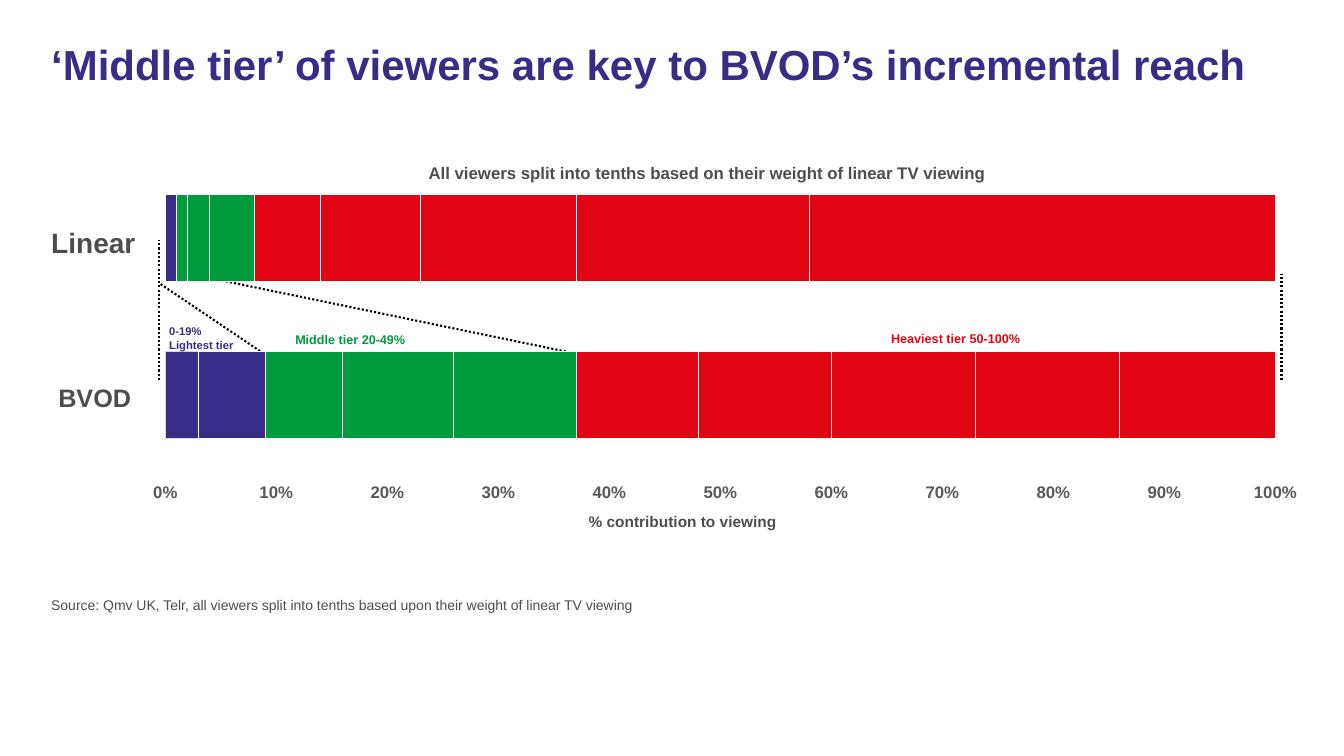
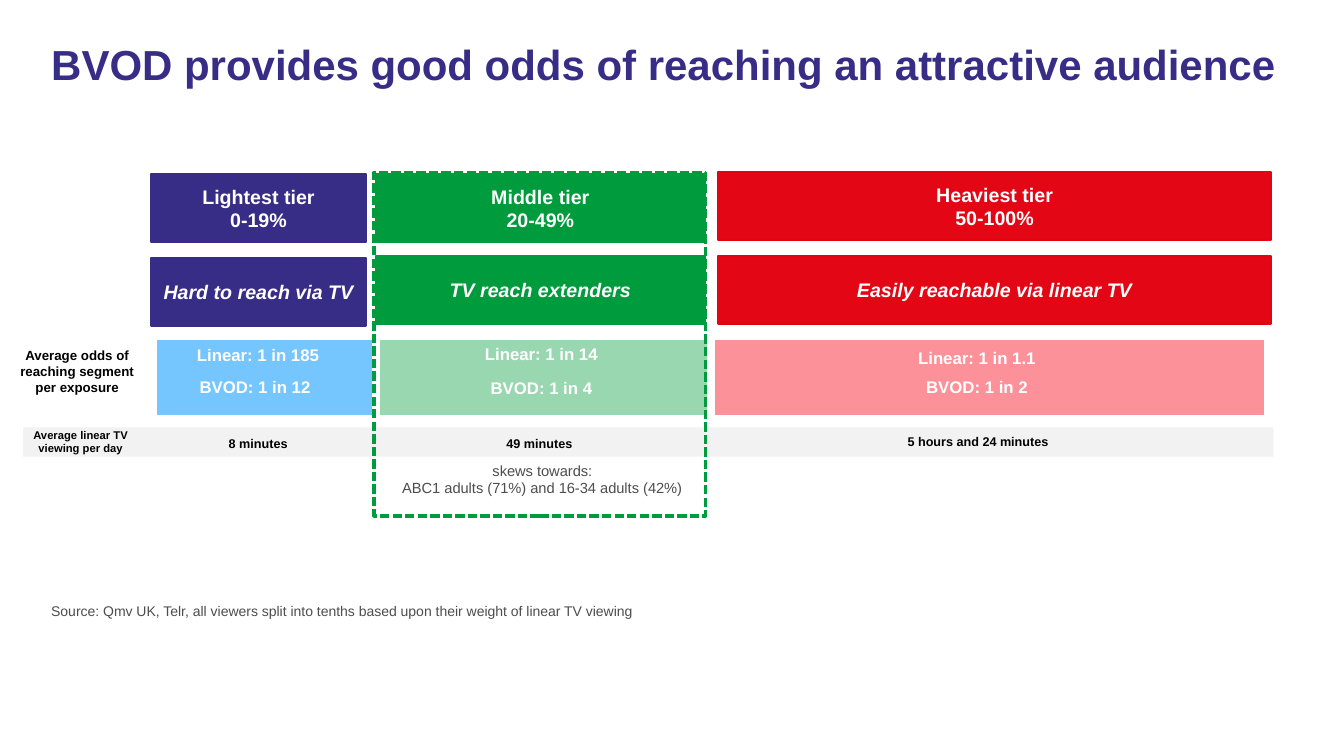
from dataclasses import dataclass

import lxml.etree
import pptx
import pptx.chart.data
import pptx.dml.color
import pptx.enum.chart
import pptx.enum.dml
import pptx.enum.shapes
import pptx.enum.text
import pptx.oxml.ns
import pptx.util

Inches, Pt = pptx.util.Inches, pptx.util.Pt
Align, Anchor = pptx.enum.text.PP_ALIGN, pptx.enum.text.MSO_ANCHOR
Dash = pptx.enum.dml.MSO_LINE
ChartType = pptx.enum.chart.XL_CHART_TYPE
qn = pptx.oxml.ns.qn


@dataclass(frozen=True)
class Theme:
    font: str = "Arial"
    indigo: str = "372D87"
    green: str = "009B3C"
    red: str = "E10514"
    red_band: str = "E30615"
    pale_blue: str = "75C5FF"
    pale_green: str = "99D7B1"
    pale_red: str = "FD9199"
    grey: str = "4D4D4D"
    axis_grey: str = "595959"
    edge_grey: str = "D9D9D9"
    strip_grey: str = "F2F2F2"
    black: str = "000000"
    white: str = "FFFFFF"
    title_size: float = 30
    row_size: float = 20
    second_row_size: float = 18
    band_size: float = 14
    lead_size: float = 12
    axis_size: float = 11
    skew_size: float = 10.5
    source_size: float = 10
    odds_label_size: float = 9.5
    label_size: float = 9
    small_size: float = 8


@dataclass(frozen=True)
class Box:
    left: float
    top: float
    width: float
    height: float

    def inner(self, dx, dy, width, height):
        """A box placed from this box's top left corner."""
        return Box(self.left + dx, self.top + dy, width, height)

    def lengths(self):
        return [Inches(v) for v in (self.left, self.top, self.width, self.height)]


THEME = Theme()
TITLE_BOX = Box(0.41, 0.39, 12.4, 1.12)
SOURCE = ("Source: Qmv UK, Telr, all viewers split into tenths based upon "
          "their weight of linear TV viewing")


def rgb(code):
    return pptx.dml.color.RGBColor.from_string(code)


def style_font(font, size, color, bold=False, italic=False):
    font.name, font.size = THEME.font, Pt(size)
    font.color.rgb = rgb(color)
    font.bold, font.italic = bold, italic


def style_line(line, color, width, dash=None):
    line.color.rgb, line.width = rgb(color), Pt(width)
    if dash:
        line.dash_style = dash


def write(frame, lines, size, color, align, bold, italic=False):
    frame.word_wrap = True
    for index, words in enumerate(lines):
        paragraph = frame.add_paragraph() if index else frame.paragraphs[0]
        paragraph.alignment = align
        run = paragraph.add_run()
        run.text = words
        style_font(run.font, size, color, bold, italic)


def add_text(slide, box, lines, size, color, align=Align.LEFT, bold=True):
    frame = slide.shapes.add_textbox(*box.lengths()).text_frame
    write(frame, lines, size, color, align, bold)
    return frame


def add_rect(slide, box, fill=None, edge=None, width=1.5, dash=None):
    rect = slide.shapes.add_shape(
        pptx.enum.shapes.MSO_SHAPE.RECTANGLE, *box.lengths())
    rect.shadow.inherit = False
    if fill:
        rect.fill.solid()
        rect.fill.fore_color.rgb = rgb(fill)
    else:
        rect.fill.background()
    if edge:
        style_line(rect.line, edge, width, dash)
    else:
        rect.line.fill.background()
    return rect


def add_band(slide, box, lines, fill, edge, italic=False):
    frame = add_rect(slide, box, fill, edge).text_frame
    frame.vertical_anchor = Anchor.MIDDLE
    write(frame, lines, THEME.band_size, THEME.white, Align.CENTER, True, italic)


def add_dotted_line(slide, box, x1, y1, x2, y2):
    ends = [Inches(v) for v in (box.left + x1, box.top + y1,
                                box.left + x2, box.top + y2)]
    line = slide.shapes.add_connector(
        pptx.enum.shapes.MSO_CONNECTOR.STRAIGHT, *ends)
    style_line(line.line, THEME.black, 1.5, Dash.ROUND_DOT)
    properties = line._element.spPr
    lxml.etree.SubElement(properties, qn("a:effectLst"))


def set_plot_area(chart, box, plot):
    """Fix the inner plot area and leave the chart background clear."""
    area = chart._chartSpace.find(qn("c:chart"))
    plot_area = area.find(qn("c:plotArea"))
    layout = plot_area.find(qn("c:layout"))
    if layout is None:
        layout = lxml.etree.Element(qn("c:layout"))
        plot_area.insert(0, layout)
    manual = lxml.etree.SubElement(layout, qn("c:manualLayout"))
    settings = [("layoutTarget", "inner"), ("xMode", "edge"), ("yMode", "edge"),
                ("x", plot.left / box.width), ("y", plot.top / box.height),
                ("w", plot.width / box.width), ("h", plot.height / box.height)]
    for tag, value in settings:
        lxml.etree.SubElement(manual, qn("c:" + tag)).set("val", str(value))
    background = lxml.etree.Element(qn("c:spPr"))
    lxml.etree.SubElement(background, qn("a:noFill"))
    edge = lxml.etree.SubElement(background, qn("a:ln"))
    lxml.etree.SubElement(edge, qn("a:noFill"))
    area.addnext(background)


def add_stacked_bars(slide, box, plot, kind, categories, series, gap):
    """Each series is (values, fill, edge colour, edge width)."""
    data = pptx.chart.data.CategoryChartData()
    data.categories = categories
    for number, (values, *_) in enumerate(series, 1):
        data.add_series(f"Series {number}", values)
    chart = slide.shapes.add_chart(kind, *box.lengths(), data).chart
    chart.has_legend = chart.has_title = False
    style_font(chart.font, THEME.source_size, THEME.black)
    bars = chart.plots[0]
    bars.gap_width, bars.overlap, bars.vary_by_categories = gap, 100, False
    for bar, (_, fill, edge, width) in zip(bars.series, series):
        bar.format.fill.solid()
        bar.format.fill.fore_color.rgb = rgb(fill)
        style_line(bar.format.line, edge, width)
    chart.category_axis.visible = False
    axis = chart.value_axis
    axis.has_major_gridlines = False
    axis.minimum_scale, axis.maximum_scale = 0, 1
    set_plot_area(chart, box, plot)
    return chart


def add_frame(slide, title, source_top):
    """The title and source line that both slides share."""
    heading = add_text(slide, TITLE_BOX, [title], THEME.title_size, THEME.indigo)
    heading.paragraphs[0].line_spacing = 0.9
    add_text(slide, Box(TITLE_BOX.left, source_top, TITLE_BOX.width, 0.33),
             [SOURCE], THEME.source_size, THEME.grey, bold=False)


def add_contribution_panel(slide, box):
    # Dotted links between the two bars
    for ends in ((0.3, 2.26, 0.3, 0.87), (11.43, 2.26, 11.43, 1.21),
                 (4.78, 2.07, 0.81, 1.25), (1.68, 2.23, 0.3, 1.3)):
        add_dotted_line(slide, box, *ends)

    # Bars: tenths of viewers, lightest first
    bvod = (0.03, 0.06, 0.07, 0.1, 0.11, 0.11, 0.12, 0.13, 0.13, 0.15)
    linear = (0, 0.01, 0.01, 0.02, 0.04, 0.06, 0.09, 0.14, 0.21, 0.42)
    fills = [THEME.indigo] * 2 + [THEME.green] * 3 + [THEME.red] * 5
    edges = [THEME.edge_grey] + [THEME.white] * 9
    series = [(pair, fill, edge, 0.75)
              for pair, fill, edge in zip(zip(bvod, linear), fills, edges)]
    chart = add_stacked_bars(slide, box, Box(0.36, 0.07, 11.01, 3.12),
                             ChartType.BAR_STACKED, ["1", "2"], series, 80)
    axis = chart.value_axis
    axis.major_unit = 0.1
    axis.tick_label_position = pptx.enum.chart.XL_TICK_LABEL_POSITION.LOW
    axis.tick_labels.number_format = "0%"
    axis.tick_labels.number_format_is_linked = False
    axis.format.line.fill.background()
    style_font(axis.tick_labels.font, THEME.lead_size, THEME.axis_grey, True)

    # Headings, row names and tier labels
    labels = (
        ((4.46, 3.52, 2.16, 0.34), ["% contribution to viewing"],
         THEME.axis_size, THEME.grey, Align.LEFT),
        ((2.64, 0.06, 6.19, 0.36),
         ["All viewers split into tenths based on their weight of linear TV viewing"],
         THEME.lead_size, THEME.grey, Align.CENTER),
        ((-0.8, 2.23, 1.32, 0.48), ["BVOD"],
         THEME.second_row_size, THEME.grey, Align.LEFT),
        ((-0.87, 0.68, 1.32, 0.52), ["Linear"],
         THEME.row_size, THEME.grey, Align.LEFT),
        ((7.46, 1.72, 1.8, 0.25), ["Heaviest tier 50-100%"],
         THEME.label_size, THEME.red, Align.LEFT),
        ((1.55, 1.73, 1.68, 0.25), ["Middle tier 20-49%"],
         THEME.label_size, THEME.green, Align.LEFT),
        ((0.3, 1.66, 0.86, 0.37), ["0-19%", "Lightest tier"],
         THEME.small_size, THEME.indigo, Align.LEFT),
    )
    for place, *content in labels:
        add_text(slide, box.inner(*place), *content)


def add_odds_panel(slide, box):
    # Grey strip and odds bar
    add_rect(slide, box.inner(-1.27, 2.53, 12.4, 0.29), THEME.strip_grey)
    shares = ((20, THEME.pale_blue), (30, THEME.pale_green), (50, THEME.pale_red))
    series = [((share, None, None, None), fill, THEME.white, 6)
              for share, fill in shares]
    chart = add_stacked_bars(
        slide, box.inner(-0.21, -0.93, 11.52, 3.44), Box(0.23, 0.08, 11.06, 3.3),
        ChartType.BAR_STACKED_100, ["1", "", "", ""], series, 0)
    chart.value_axis.visible = False

    # Figures for each tier: text, left, top, width
    odds = (("Linear: 1 in 185", 0.23, 1.66, 1.66), ("BVOD: 1 in 12", 0.33, 1.98, 1.4),
            ("Linear: 1 in 14", 3.04, 1.65, 1.66), ("BVOD: 1 in 4", 3.26, 1.99, 1.22),
            ("Linear: 1 in 1.1", 7.36, 1.69, 1.66), ("BVOD: 1 in 2", 7.58, 1.98, 1.22))
    minutes = (("8 minutes", 0.62, 2.56, 0.88), ("49 minutes", 3.41, 2.56, 0.88),
               ("5 hours and 24 minutes", 7.22, 2.55, 1.96))
    for figures, height, size, color in (
            (odds, 0.3, THEME.lead_size, THEME.white),
            (minutes, 0.25, THEME.label_size, THEME.black)):
        for words, left, top, width in figures:
            add_text(slide, box.inner(left, top, width, height), [words],
                     size, color, Align.CENTER)

    # Row names and the middle tier's profile
    add_text(slide, box.inner(-1.29, 2.49, 1.18, 0.37),
             ["Average linear TV viewing per day"],
             THEME.small_size, THEME.black, Align.CENTER)
    add_text(slide, box.inner(-1.44, 1.69, 1.41, 0.58),
             ["Average odds of reaching segment per exposure"],
             THEME.odds_label_size, THEME.black, Align.CENTER)
    add_text(slide, box.inner(2.08, 2.82, 3.6, 0.45),
             ["skews towards:", "ABC1 adults (71%) and 16-34 adults (42%)"],
             THEME.skew_size, THEME.grey, Align.CENTER, bold=False)

    # Tier bands, with the dashed highlight between the two rows
    tiers = (
        (0, 2.13, 0.02, 0.85, THEME.indigo, THEME.indigo,
         ["Lightest tier", "0-19%"], "Hard to reach via TV"),
        (2.23, 3.26, 0.02, 0.83, THEME.green, THEME.green,
         ["Middle tier", "20-49%"], "TV reach extenders"),
        (5.62, 5.49, 0, 0.83, THEME.red_band, THEME.red,
         ["Heaviest tier", "50-100%"], "Easily reachable via linear TV"),
    )
    for left, width, _, top, fill, edge, _, reach in tiers:
        add_band(slide, box.inner(left, top, width, 0.67), [reach], fill, edge, True)
    add_rect(slide, box.inner(2.21, 0, 3.29, box.height), edge=THEME.green,
             width=2.25, dash=Dash.SQUARE_DOT)
    for left, width, top, _, fill, edge, name, _ in tiers:
        add_band(slide, box.inner(left, top, width, 0.67), name, fill, edge)


def main():
    deck = pptx.Presentation()
    deck.slide_width, deck.slide_height = Inches(13.33), Inches(7.5)
    blank = deck.slide_layouts[6]
    pages = (
        ("‘Middle tier’ of viewers are key to BVOD’s incremental reach", 5.87,
         add_contribution_panel, Box(1.28, 1.51, 11.82, 3.53)),
        ("BVOD provides good odds of reaching an attractive audience", 5.93,
         add_odds_panel, Box(1.5, 1.71, 11.11, 3.41)),
    )
    for title, source_top, add_panel, box in pages:
        slide = deck.slides.add_slide(blank)
        add_panel(slide, box)
        add_frame(slide, title, source_top)
    deck.save("out.pptx")


if __name__ == "__main__":
    main()
